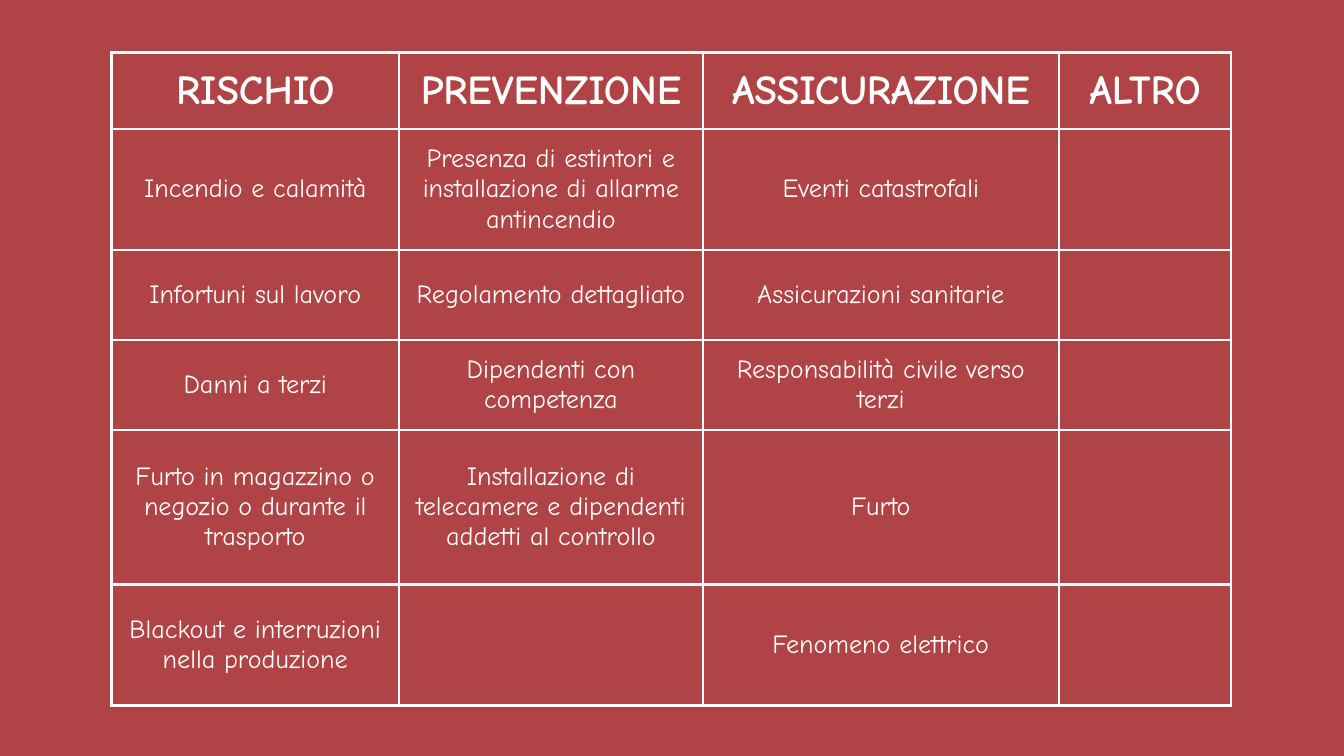
import pptx
import pptx.dml.color
import pptx.enum.text
import pptx.oxml
import pptx.oxml.ns
import pptx.util
from pptx.util import Inches

RED = "AF4345"
WHITE = "FFFFFF"
FONT = "Comic Neue"

COL_WIDTHS = [2.14, 2.26, 2.65, 1.28]
ROW_HEIGHTS = [0.57, 0.9, 0.67, 0.67, 1.15, 0.9]
ROWS = [
    ["RISCHIO", "PREVENZIONE", "ASSICURAZIONE", "ALTRO"],
    ["Incendio e calamità",
     "Presenza di estintori e installazione di allarme antincendio",
     "Eventi catastrofali", ""],
    ["Infortuni sul lavoro", "Regolamento dettagliato", "Assicurazioni sanitarie", ""],
    ["Danni a terzi", "Dipendenti con competenza", "Responsabilità civile verso terzi", ""],
    ["Furto in magazzino o negozio o durante il trasporto",
     "Installazione di telecamere e dipendenti addetti al controllo",
     "Furto", ""],
    ["Blackout e interruzioni nella produzione", "", "Fenomeno elettrico", ""],
]


def rgb(color):
    return pptx.dml.color.RGBColor.from_string(color)


def write_text(tf, text, size=14, bold=False, color=WHITE, font=FONT):
    p = tf.paragraphs[0]
    p.alignment = pptx.enum.text.PP_ALIGN.CENTER
    if not text:
        p.font.size = pptx.util.Pt(size)
        return
    r = p.add_run()
    r.text = text
    r.font.name = font
    r.font.size = pptx.util.Pt(size)
    r.font.bold = bold
    r.font.color.rgb = rgb(color)


def add_borders(cell, color=WHITE, width=1.5):
    tc_pr = cell._tc.get_or_add_tcPr()
    for side in ("lnL", "lnR", "lnT", "lnB"):
        tc_pr.append(pptx.oxml.parse_xml(
            f'<a:{side} {pptx.oxml.ns.nsdecls("a")} w="{pptx.util.Pt(width)}">'
            f'<a:solidFill><a:srgbClr val="{color}"/></a:solidFill></a:{side}>'))


def format_cell(cell):
    cell.vertical_anchor = pptx.enum.text.MSO_ANCHOR.MIDDLE
    cell.margin_left = cell.margin_right = Inches(0.1)
    cell.margin_top = cell.margin_bottom = Inches(0.1)
    add_borders(cell)
    cell.fill.background()


def add_risk_table(s, left, top):
    table = s.shapes.add_table(
        len(ROWS), len(COL_WIDTHS), Inches(left), Inches(top),
        Inches(sum(COL_WIDTHS)), Inches(sum(ROW_HEIGHTS))).table
    table.horz_banding = False
    for column, width in zip(table.columns, COL_WIDTHS):
        column.width = Inches(width)
    for i, (row, height) in enumerate(zip(table.rows, ROW_HEIGHTS)):
        row.height = Inches(height)
        is_header = i == 0
        for cell, text in zip(row.cells, ROWS[i]):
            format_cell(cell)
            write_text(cell.text_frame, text, size=22 if is_header else 14, bold=is_header)


def main():
    prs = pptx.Presentation()
    prs.slide_width = Inches(10)
    prs.slide_height = prs.slide_width * 9 // 16
    s = prs.slides.add_slide(prs.slide_layouts[6])
    s.background.fill.solid()
    s.background.fill.fore_color.rgb = rgb(RED)
    add_risk_table(s, 0.83, 0.39)
    prs.save("out.pptx")


if __name__ == "__main__":
    main()
